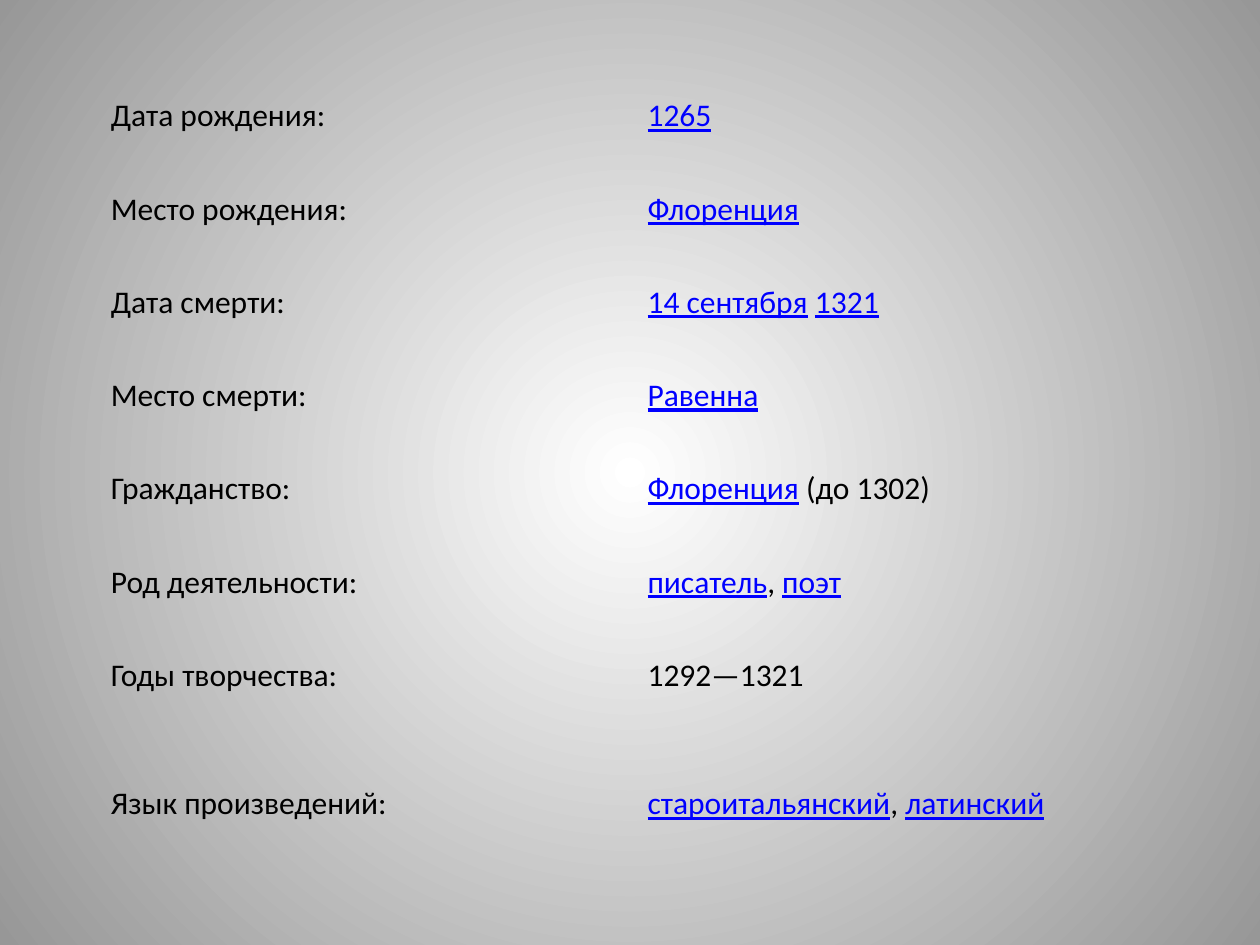
from pptx import Presentation
from pptx.dml.color import RGBColor
from pptx.enum.text import MSO_ANCHOR
from pptx.oxml import parse_xml
from pptx.oxml.ns import nsdecls, qn
from pptx.util import Cm, Pt

BLACK = "000000"
LINK_BLUE = "0000FF"
PLAIN_TABLE_STYLE = "{2D5ABB26-0587-4C30-8999-92F81FD0307C}"

FACTS = [
    ("Дата рождения:", [("1265", True)]),
    ("Место рождения:", [("Флоренция", True)]),
    ("Дата смерти:", [("14 сентября", True), (" ", False), ("1321", True)]),
    ("Место смерти:", [("Равенна", True)]),
    ("Гражданство:", [("Флоренция", True), (" (до 1302)", False)]),
    ("Род деятельности:", [("писатель", True), (", ", False), ("поэт", True)]),
    ("Годы творчества:", [("1292—1321", False)]),
    ("Язык произведений:",
     [("староитальянский", True), (", ", False), ("латинский", True)]),
]


def color(hex_string):
    return RGBColor.from_string(hex_string)


def paint_background(page, center, edge):
    fill = page.background.fill
    fill.gradient()
    for stop, position, shade in zip(fill.gradient_stops, (0, 1), (center, edge)):
        stop.position = position
        stop.color.rgb = color(shade)
    gradient = next(page.element.iter(qn("a:gradFill")))
    linear = gradient.find(qn("a:lin"))
    radial = parse_xml(
        f'<a:path {nsdecls("a")} path="circle">'
        '<a:fillToRect l="50000" t="50000" r="50000" b="50000"/></a:path>'
    )
    gradient.replace(linear, radial)


def write_cell(cell, pieces):
    cell.fill.background()
    cell.vertical_anchor = MSO_ANCHOR.MIDDLE
    para = cell.text_frame.paragraphs[0]
    for text, linked in pieces:
        span = para.add_run()
        span.text = text
        span.font.name = "Calibri"
        span.font.size = Pt(18)
        span.font.underline = linked
        span.font.color.rgb = color(LINK_BLUE if linked else BLACK)


def add_facts_table(page, facts):
    heights = [Cm(1.88)] * (len(facts) - 1) + [Cm(3.3)]
    frame = page.shapes.add_table(
        len(facts), 2, Cm(1.98), Cm(1.4), Cm(21.64), sum(heights)
    )
    table = frame.table
    table.first_row = False
    table.horz_banding = False
    next(frame.element.iter(qn("a:tableStyleId"))).text = PLAIN_TABLE_STYLE
    for row, height, (label, pieces) in zip(table.rows, heights, facts):
        row.height = height
        write_cell(row.cells[0], [(label, False)])
        write_cell(row.cells[1], pieces)


def main():
    deck = Presentation()
    deck.slide_width = Cm(25.4)
    deck.slide_height = Cm(19.05)
    page = deck.slides.add_slide(deck.slide_layouts[6])
    paint_background(page, "FFFFFF", "979797")
    add_facts_table(page, FACTS)
    deck.save("out.pptx")


if __name__ == "__main__":
    main()
